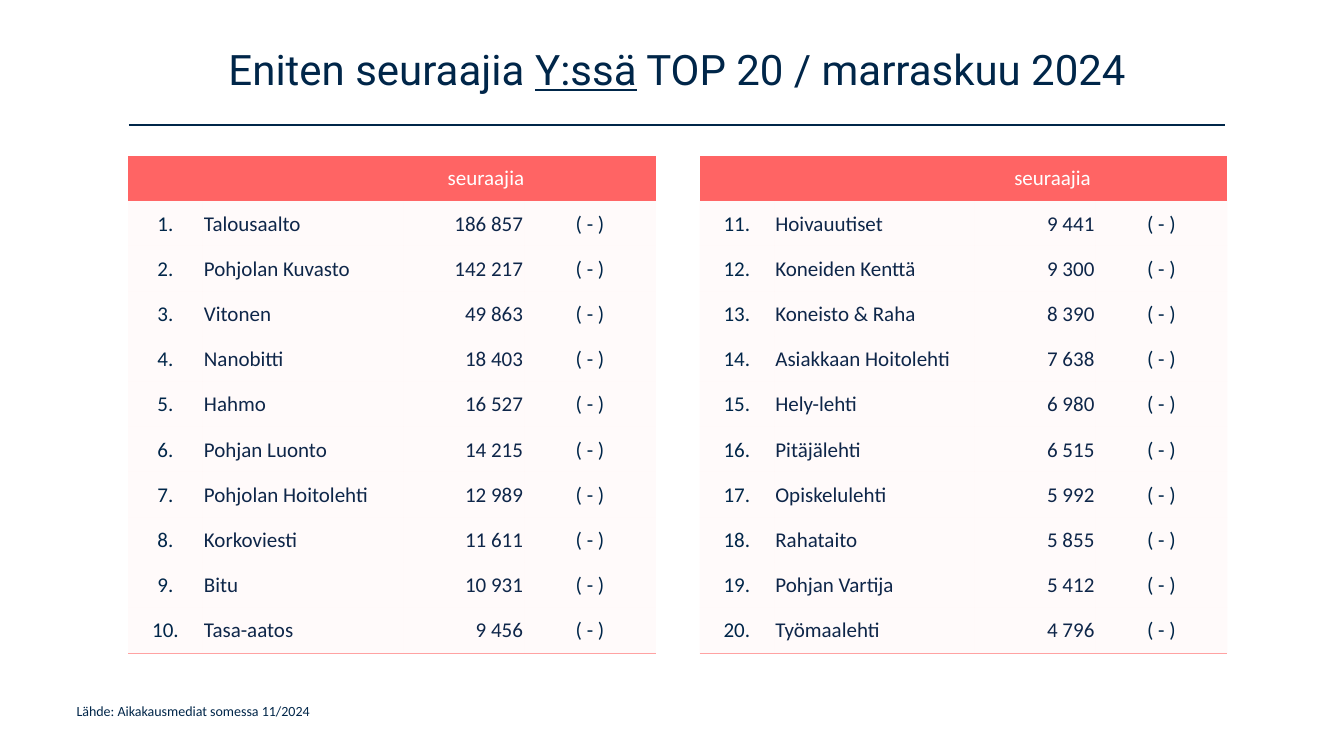
from dataclasses import dataclass

from lxml.etree import SubElement
from pptx import Presentation
from pptx.dml.color import RGBColor
from pptx.enum.shapes import MSO_CONNECTOR
from pptx.enum.text import MSO_ANCHOR as ANCHOR, MSO_AUTO_SIZE, PP_ALIGN as ALIGN
from pptx.oxml import parse_xml
from pptx.oxml.ns import nsdecls, qn
from pptx.slide import Slide
from pptx.table import _Cell as Cell
from pptx.util import Cm, Pt

NAVY = RGBColor(0x00, 0x26, 0x49)
INK = RGBColor(0x0E, 0x26, 0x49)
CORAL = RGBColor(0xFF, 0x64, 0x64)
BLUSH = RGBColor(0xFF, 0xE0, 0xE0)
ROSE = RGBColor(0xFF, 0xA2, 0xA2)
WHITE = RGBColor(0xFF, 0xFF, 0xFF)

BODY_FONT = "Calibri"
TITLE_FONT = "Roboto"
NO_STYLE_NO_GRID = "{2D5ABB26-0587-4C30-8999-92F81FD0307C}"
TABLE_TOP = 3.92
ROW_HEIGHT = 1.14
COLUMN_WIDTHS = (1.88, 5.05, 3.05, 3.32)
COLUMN_STYLES = (
    (ALIGN.CENTER, NAVY),
    (ALIGN.LEFT, INK),
    (ALIGN.RIGHT, INK),
    (ALIGN.CENTER, NAVY),
)
CHANGE = "( - )"


@dataclass(frozen=True)
class Magazine:
    name: str
    followers: str


@dataclass(frozen=True)
class Ranking:
    left: float
    first_rank: int
    header: str
    magazines: tuple[Magazine, ...]


RANKINGS = (
    Ranking(3.23, 1, "seuraajia", (
        Magazine("Talousaalto", "186 857"),
        Magazine("Pohjolan Kuvasto", "142 217"),
        Magazine("Vitonen", "49 863"),
        Magazine("Nanobitti", "18 403"),
        Magazine("Hahmo", "16 527"),
        Magazine("Pohjan Luonto", "14 215"),
        Magazine("Pohjolan Hoitolehti", "12 989"),
        Magazine("Korkoviesti", "11 611"),
        Magazine("Bitu", "10 931"),
        Magazine("Tasa-aatos", "9 456"),
    )),
    Ranking(17.63, 11, "seuraajia ", (
        Magazine("Hoivauutiset", "9 441"),
        Magazine("Koneiden Kenttä", "9 300"),
        Magazine("Koneisto & Raha", "8 390"),
        Magazine("Asiakkaan Hoitolehti", "7 638"),
        Magazine("Hely-lehti", "6 980"),
        Magazine("Pitäjälehti", "6 515"),
        Magazine("Opiskelulehti", "5 992"),
        Magazine("Rahataito", "5 855"),
        Magazine("Pohjan Vartija", "5 412"),
        Magazine("Työmaalehti", "4 796"),
    )),
)


def fill_cell(cell: Cell, color: RGBColor, opacity: int = 100) -> None:
    cell.fill.solid()
    cell.fill.fore_color.rgb = color
    if opacity < 100:
        srgb = cell._tc.tcPr.find(qn("a:solidFill")).find(qn("a:srgbClr"))
        SubElement(srgb, qn("a:alpha")).set("val", str(opacity * 1000))


def write_cell(cell: Cell, text: str, align: ALIGN, color: RGBColor, margin: float) -> None:
    cell.margin_left = cell.margin_right = cell.margin_top = Cm(margin)
    cell.margin_bottom = 0
    cell.vertical_anchor = ANCHOR.MIDDLE
    p = cell.text_frame.paragraphs[0]
    p.text = text
    p.alignment = align
    p.font.name = BODY_FONT
    p.font.size = Pt(15)
    for r in p.runs:
        r.font.name = BODY_FONT
        r.font.size = Pt(15)
        r.font.color.rgb = color


def add_bottom_border(cell: Cell) -> None:
    border = parse_xml(
        f'<a:lnB {nsdecls("a")} w="{Pt(0.25)}"><a:solidFill>'
        f'<a:srgbClr val="{ROSE}"/></a:solidFill></a:lnB>'
    )
    cell._tc.get_or_add_tcPr().insert(0, border)


def add_ranking(s: Slide, ranking: Ranking) -> None:
    row_count = len(ranking.magazines) + 1
    frame = s.shapes.add_table(
        row_count, len(COLUMN_WIDTHS), Cm(ranking.left), Cm(TABLE_TOP),
        Cm(sum(COLUMN_WIDTHS)), Cm(ROW_HEIGHT * row_count),
    )
    table = frame.table
    table.first_row = table.horz_banding = False
    table._tbl.tblPr.find(qn("a:tableStyleId")).text = NO_STYLE_NO_GRID
    for column, width in zip(table.columns, COLUMN_WIDTHS):
        column.width = Cm(width)
    for row in table.rows:
        row.height = Cm(ROW_HEIGHT)

    for cell, text in zip(table.rows[0].cells, ("", "", ranking.header, "")):
        write_cell(cell, text, ALIGN.RIGHT, WHITE, 0)
        fill_cell(cell, CORAL)
    table.cell(0, 0).merge(table.cell(0, 1))

    for i, magazine in enumerate(ranking.magazines):
        texts = (f"{ranking.first_rank + i}.", magazine.name, magazine.followers, CHANGE)
        cells = table.rows[i + 1].cells
        for cell, text, (align, color) in zip(cells, texts, COLUMN_STYLES):
            write_cell(cell, text, align, color, 0.03)
            fill_cell(cell, BLUSH, 15)
            if i == len(ranking.magazines) - 1:
                add_bottom_border(cell)


def add_title(s: Slide) -> None:
    tf = s.shapes.add_textbox(Cm(2.34), Cm(0.53), Cm(29.46), Cm(2.59)).text_frame
    tf.word_wrap = True
    tf.vertical_anchor = ANCHOR.MIDDLE
    p = tf.paragraphs[0]
    p.alignment = ALIGN.CENTER
    p.line_spacing = 0.9
    for text in ("Eniten seuraajia ", "Y:ssä", " TOP 20 / marraskuu 2024"):
        r = p.add_run()
        r.text = text
        r.font.name = TITLE_FONT
        r.font.size = Pt(30)
        r.font.color.rgb = NAVY
        r.font.underline = text == "Y:ssä"


def add_title_rule(s: Slide) -> None:
    rule = s.shapes.add_connector(
        MSO_CONNECTOR.STRAIGHT, Cm(3.25), Cm(3.15), Cm(30.86), Cm(3.15)
    )
    rule.line.color.rgb = NAVY
    rule.line.width = Pt(1)
    SubElement(rule._element.spPr, qn("a:effectLst"))


def add_source_note(s: Slide) -> None:
    tf = s.shapes.add_textbox(Cm(1.68), Cm(17.58), Cm(16.71), Cm(1.12)).text_frame
    tf.word_wrap = True
    tf.auto_size = MSO_AUTO_SIZE.SHAPE_TO_FIT_TEXT
    tf.text = "Lähde: Aikakausmediat somessa 11/2024"
    font = tf.paragraphs[0].runs[0].font
    font.name = BODY_FONT
    font.size = Pt(10)
    font.color.rgb = NAVY


def main() -> None:
    prs = Presentation()
    prs.slide_width, prs.slide_height = Cm(33.87), Cm(19.05)
    s = prs.slides.add_slide(prs.slide_layouts[6])
    add_source_note(s)
    add_title_rule(s)
    add_title(s)
    for ranking in RANKINGS:
        add_ranking(s, ranking)
    prs.save("out.pptx")


if __name__ == "__main__":
    main()
